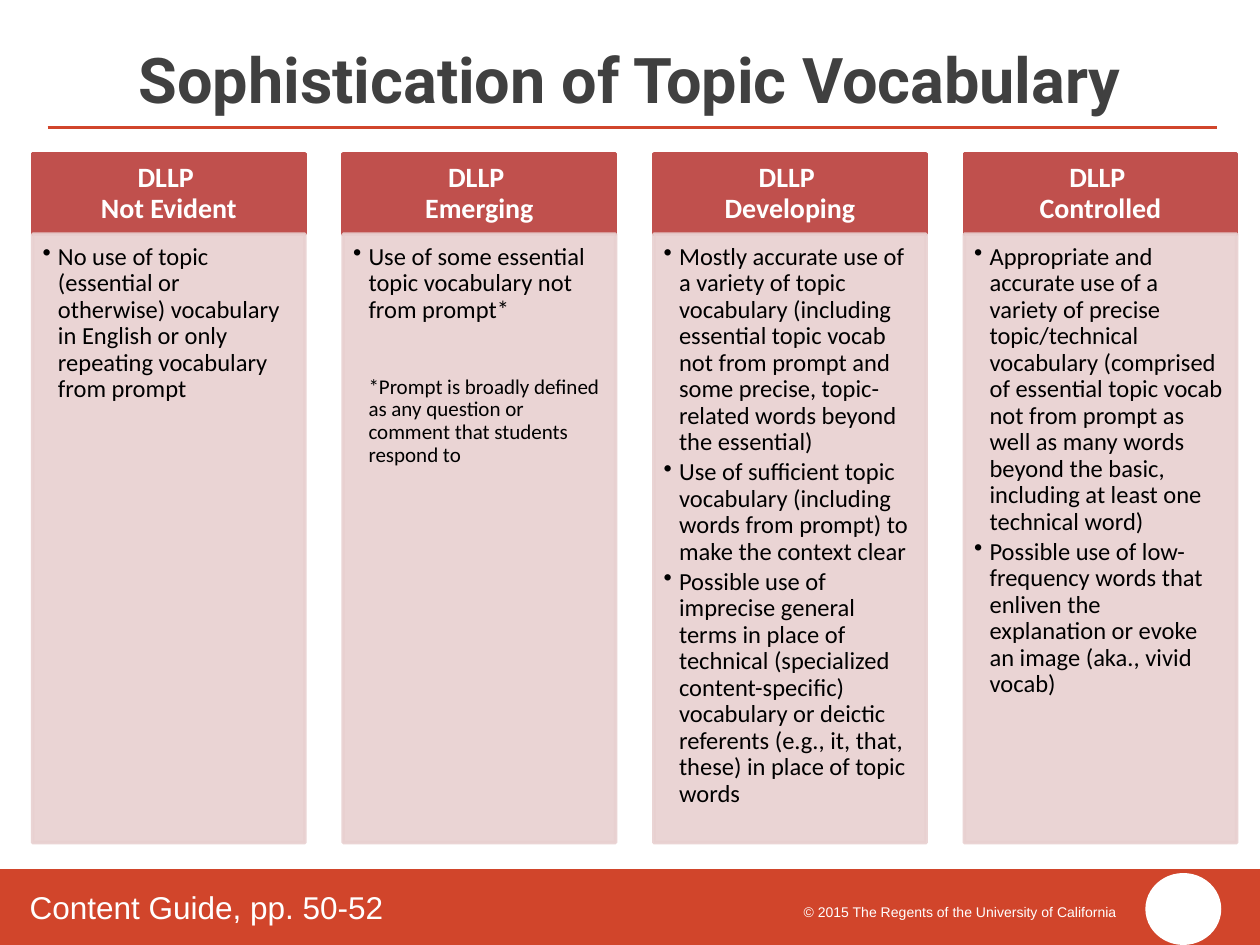
from dataclasses import dataclass

from lxml import etree
from pptx import Presentation, util as u
from pptx.dml.color import RGBColor
from pptx.enum import shapes, text
from pptx.oxml.ns import qn

COLOURS = {
    "accent": "D1452B",
    "header": "C0504D",
    "panel": "E8D0D0",
    "title": "404040",
    "black": "000000",
    "white": "FFFFFF",
}


@dataclass(frozen=True)
class Style:
    size: float
    font: str
    colour: str
    bold: bool = False


@dataclass(frozen=True)
class Area:
    left: float
    top: float
    width: float
    height: float

    def lengths(self) -> list:
        return [u.Cm(value) for value in (self.left, self.top, self.width, self.height)]


@dataclass(frozen=True)
class Column:
    level: str
    points: tuple[str, ...]
    note: str = ""


TITLE = Style(36, "Roboto", "title", True)
HEADER = Style(16, "Calibri", "white", True)
POINT = Style(14, "Calibri", "black")
NOTE = Style(12, "Calibri", "black")
FOOTER = Style(18, "Arial", "white")
COPYRIGHT = Style(8, "Arial", "white")

COLUMN_LEFT, COLUMN_PITCH, COLUMN_WIDTH = 0.66, 6.26, 5.49
HEADER_TOP, HEADER_HEIGHT = 3.1, 1.62
PANEL_HEIGHT = 12.27
BULLET_INDENT = 0.31

COLUMNS = (
    Column("Not Evident", (
        "No use of topic (essential or otherwise) vocabulary in English or only "
        "repeating vocabulary from prompt",
    )),
    Column("Emerging", (
        "Use of some essential topic vocabulary not from prompt*",
    ), "*Prompt is broadly defined as any question or comment that students respond to"),
    Column("Developing", (
        "Mostly accurate use of a variety of topic vocabulary (including essential topic "
        "vocab not from prompt and some precise, topic-related words beyond the essential)",
        "Use of sufficient topic vocabulary (including words from prompt) to make the "
        "context clear",
        "Possible use of imprecise general terms in place of technical (specialized "
        "content-specific) vocabulary or deictic referents (e.g., it, that, these) in "
        "place of topic words",
    )),
    Column("Controlled", (
        "Appropriate and accurate use of a variety of precise topic/technical vocabulary "
        "(comprised of essential topic vocab not from prompt as well as many words beyond "
        "the basic, including at least one technical word)",
        "Possible use of low- frequency words that enliven the explanation or evoke an "
        "image (aka., vivid vocab)",
    )),
)


def rgb(name: str) -> RGBColor:
    return RGBColor.from_string(COLOURS[name])


def add_span(para, words: str, style: Style) -> None:
    span = para.add_run()
    span.text = words
    span.font.size = u.Pt(style.size)
    span.font.name = style.font
    span.font.bold = style.bold
    span.font.color.rgb = rgb(style.colour)


def add_block(page, kind, area: Area, colour: str, outlined: bool = False, opacity: int = 100):
    box = page.shapes.add_shape(kind, *area.lengths())
    box.shadow.inherit = False
    box.fill.solid()
    box.fill.fore_color.rgb = rgb(colour)
    if outlined:
        box.line.color.rgb = rgb(colour)
        box.line.width = u.Pt(2)
    else:
        box.line.fill.background()
    if opacity < 100:
        for tint in box._element.spPr.iter(qn("a:srgbClr")):
            etree.SubElement(tint, qn("a:alpha"), val=str(opacity * 1000))
    return box


def set_frame(box, anchor, margins: tuple[float, float, float, float]):
    frame = box.text_frame
    frame.word_wrap = True
    frame.vertical_anchor = anchor
    (frame.margin_left, frame.margin_top,
     frame.margin_right, frame.margin_bottom) = [u.Cm(value) for value in margins]
    return frame


def add_label(page, area: Area, words: str, style: Style,
              align=text.PP_ALIGN.LEFT, anchor=text.MSO_ANCHOR.TOP) -> None:
    box = page.shapes.add_textbox(*area.lengths())
    para = set_frame(box, anchor, (0.25, 0.13, 0.25, 0.13)).paragraphs[0]
    para.alignment = align
    add_span(para, words, style)


def add_point(para, words: str, style: Style, bulleted: bool = True) -> None:
    properties = para._p.get_or_add_pPr()
    properties.set("marL", str(u.Cm(BULLET_INDENT)))
    properties.set("indent", str(-u.Cm(BULLET_INDENT) if bulleted else 0))
    if bulleted:
        etree.SubElement(properties, qn("a:buChar"), char="•")
    para.alignment = text.PP_ALIGN.LEFT
    para.line_spacing = 0.9
    para.space_after = u.Pt(2.1)
    add_span(para, words, style)


def add_column(page, left: float, column: Column) -> None:
    header = add_block(page, shapes.MSO_SHAPE.RECTANGLE,
                       Area(left, HEADER_TOP, COLUMN_WIDTH, HEADER_HEIGHT), "header", True)
    para = set_frame(header, text.MSO_ANCHOR.MIDDLE, (0.3, 0.18, 0.3, 0.18)).paragraphs[0]
    para.alignment = text.PP_ALIGN.CENTER
    para.line_spacing = 0.9
    add_span(para, "DLLP ", HEADER)
    para.add_line_break()
    add_span(para, column.level, HEADER)

    panel = add_block(page, shapes.MSO_SHAPE.RECTANGLE,
                      Area(left, HEADER_TOP + HEADER_HEIGHT, COLUMN_WIDTH, PANEL_HEIGHT),
                      "panel", True, 90)
    frame = set_frame(panel, text.MSO_ANCHOR.TOP, (0.2, 0.2, 0.28, 0.3))
    for index, point in enumerate(column.points):
        para = frame.add_paragraph() if index else frame.paragraphs[0]
        add_point(para, point, POINT)
    if column.note:
        para = frame.add_paragraph()
        para.space_before = u.Pt(28)
        add_point(para, column.note, NOTE, bulleted=False)


def add_rule(page, left: float, right: float, top: float) -> None:
    rule = page.shapes.add_connector(shapes.MSO_CONNECTOR.STRAIGHT,
                                     u.Cm(left), u.Cm(top), u.Cm(right), u.Cm(top))
    rule.line.color.rgb = rgb("accent")
    rule.line.width = u.Pt(2)
    etree.SubElement(rule._element.spPr, qn("a:effectLst"))


def main() -> None:
    deck = Presentation()
    deck.slide_width, deck.slide_height = u.Cm(25.4), u.Cm(19.05)
    page = deck.slides.add_slide(deck.slide_layouts[6])

    add_block(page, shapes.MSO_SHAPE.RECTANGLE, Area(0, 17.52, 25.4, 1.53), "accent")
    add_rule(page, 0.96, 24.54, 2.57)
    add_block(page, shapes.MSO_SHAPE.OVAL, Area(23.09, 17.6, 1.53, 1.45), "white")
    add_label(page, Area(15.95, 18.08, 6.98, 0.6),
              "© 2015 The Regents of the University of California", COPYRIGHT)
    add_label(page, Area(1.19, 0.58, 23.02, 2), "Sophistication of Topic Vocabulary",
              TITLE, text.PP_ALIGN.CENTER, text.MSO_ANCHOR.MIDDLE)
    for index, column in enumerate(COLUMNS):
        add_column(page, COLUMN_LEFT + index * COLUMN_PITCH, column)
    add_label(page, Area(0.35, 17.78, 19.28, 1.03), "Content Guide, pp. 50-52", FOOTER)

    deck.save("out.pptx")


if __name__ == "__main__":
    main()
